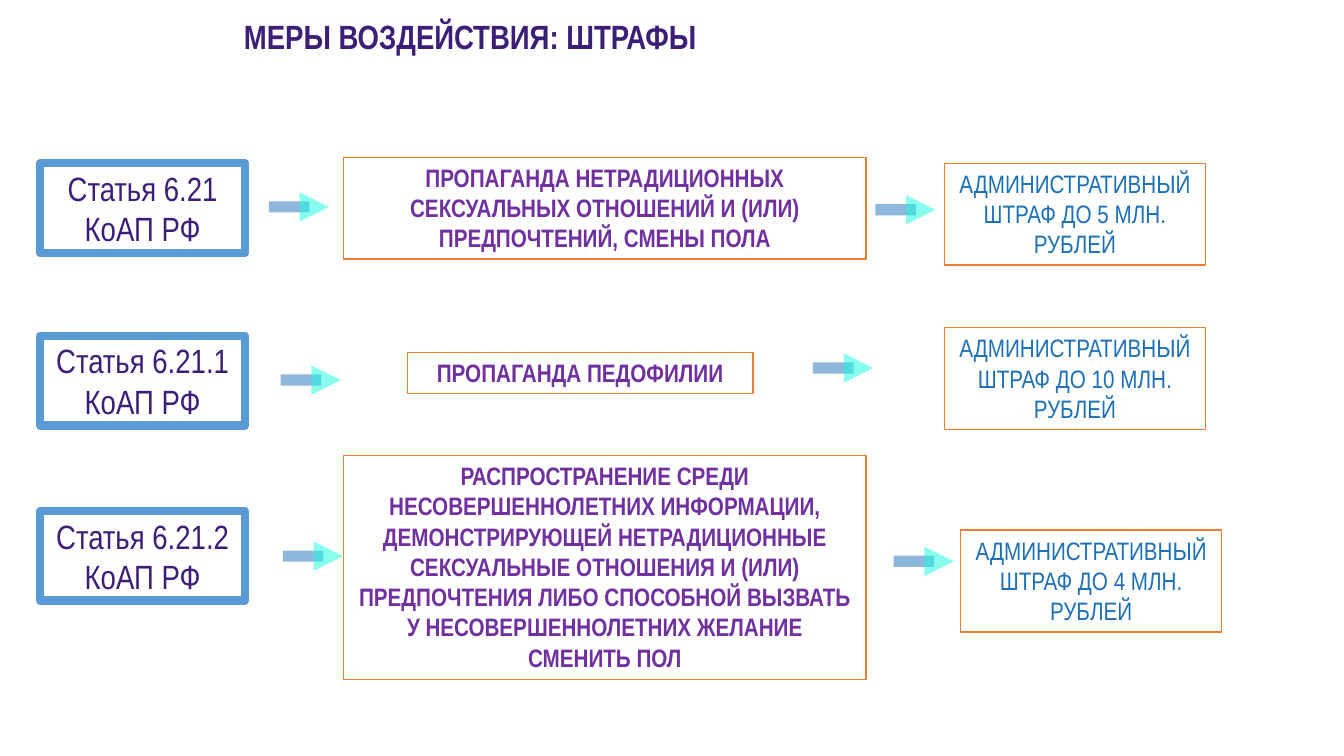
import pptx
import pptx.dml.color
import pptx.enum.shapes
import pptx.enum.text
import pptx.oxml.ns
import pptx.util
from lxml import etree

Pt = pptx.util.Pt
SHAPE = pptx.enum.shapes.MSO_SHAPE
ANCHOR = pptx.enum.text.MSO_ANCHOR
ALIGN = pptx.enum.text.PP_ALIGN
AUTO_SIZE = pptx.enum.text.MSO_AUTO_SIZE

TITLE = "МЕРЫ ВОЗДЕЙСТВИЯ: ШТРАФЫ"

# Boxes are (left, top, width, height); arrows are (left, middle).
ROWS = [
    {
        "article": "6.21", "article_top": 116.6,
        "offence": "ПРОПАГАНДА НЕТРАДИЦИОННЫХ СЕКСУАЛЬНЫХ ОТНОШЕНИЙ И (ИЛИ) "
                   "ПРЕДПОЧТЕНИЙ, СМЕНЫ ПОЛА",
        "offence_box": (245.5, 112.3, 373, 72.7),
        "limit": 5, "fine_corner": (674.6, 116.6),
        "arrows": [(192, 147.8), (625.3, 149.8)],
    },
    {
        "article": "6.21.1", "article_top": 239.8,
        "offence": "ПРОПАГАНДА ПЕДОФИЛИИ",
        "offence_box": (290.9, 252, 247, 29),
        "limit": 10, "fine_corner": (674.6, 234),
        "arrows": [(200.5, 271.5), (580.7, 262.9)],
    },
    {
        "article": "6.21.2", "article_top": 365,
        "offence": "РАСПРОСТРАНЕНИЕ СРЕДИ НЕСОВЕРШЕННОЛЕТНИХ ИНФОРМАЦИИ, "
                   "ДЕМОНСТРИРУЮЩЕЙ НЕТРАДИЦИОННЫЕ СЕКСУАЛЬНЫЕ ОТНОШЕНИЯ "
                   "И (ИЛИ) ПРЕДПОЧТЕНИЯ ЛИБО СПОСОБНОЙ ВЫЗВАТЬ У "
                   "НЕСОВЕРШЕННОЛЕТНИХ ЖЕЛАНИЕ СМЕНИТЬ ПОЛ",
        "offence_box": (245.5, 325.4, 373, 160),
        "limit": 4, "fine_corner": (686.2, 378.7),
        "arrows": [(202, 397.3), (638.3, 401)],
    },
]

THEME = {
    "font": "Arial Narrow",
    "large": 24,
    "body": 18,
    "heading": "3C1E78",
    "offence": "7030A0",
    "fine": "1D70B7",
    "paper": "FFFFFF",
    "article_line": "5B9BD5",
    "box_line": "ED7D31",
    "arrow_bar": "1D70B8",
    "arrow_head": "15FEE0",
}
ARTICLE_LEFT, ARTICLE_SIZE = 28.8, (146.2, 64.1)
FINE_SIZE = (186.5, 72.7)
BAR_SIZE, HEAD_OFFSET, HEAD_SIZE = (29, 8), 22, 21


def rgb(name):
    return pptx.dml.color.RGBColor.from_string(THEME[name])


def write(shape, text, *, size, color, bold=False, align=ALIGN.CENTER,
          anchor=ANCHOR.TOP, grow=True):
    frame = shape.text_frame
    frame.word_wrap = True
    frame.vertical_anchor = anchor
    frame.auto_size = AUTO_SIZE.SHAPE_TO_FIT_TEXT if grow else AUTO_SIZE.NONE
    paragraph = frame.paragraphs[0]
    paragraph.alignment = align
    run = paragraph.add_run()
    run.text = text
    run.font.name = THEME["font"]
    run.font.size = Pt(THEME[size])
    run.font.bold = bold
    run.font.color.rgb = rgb(color)


def add_filled(shapes, kind, box, fill):
    shape = shapes.add_shape(kind, *map(Pt, box))
    shape.shadow.inherit = False
    shape.fill.solid()
    shape.fill.fore_color.rgb = rgb(fill)
    shape.line.fill.background()
    return shape


def add_box(slide, box, text, line, line_width, **text_format):
    shape = add_filled(slide.shapes, SHAPE.RECTANGLE, box, "paper")
    shape.line.color.rgb = rgb(line)
    shape.line.width = Pt(line_width)
    write(shape, text, **text_format)


def make_half_transparent(shape):
    qn = pptx.oxml.ns.qn
    color = shape.fill.fore_color
    for element in shape.element.spPr.iter(qn("a:srgbClr")):
        if element.get("val") == str(color.rgb):
            etree.SubElement(element, qn("a:alpha"), val="50000")


def add_arrow(slide, left, middle):
    group = slide.shapes.add_group_shape()
    bar_width, bar_height = BAR_SIZE
    bar = add_filled(group.shapes, SHAPE.RECTANGLE,
                     (left, middle - bar_height / 2, bar_width, bar_height),
                     "arrow_bar")
    head = add_filled(group.shapes, SHAPE.ISOSCELES_TRIANGLE,
                      (left + HEAD_OFFSET, middle - HEAD_SIZE / 2,
                       HEAD_SIZE, HEAD_SIZE), "arrow_head")
    head.rotation = 90
    for part in (bar, head):
        make_half_transparent(part)


def add_title(slide):
    title = slide.shapes.add_textbox(Pt(174.2), Pt(11.5), Pt(553), Pt(29))
    frame = title.text_frame
    frame.margin_left = frame.margin_right = 0
    frame.margin_top = frame.margin_bottom = 0
    write(title, TITLE, size="large", color="heading", bold=True,
          align=ALIGN.LEFT)


def add_row(slide, row):
    add_box(slide, (ARTICLE_LEFT, row["article_top"], *ARTICLE_SIZE),
            f"Статья {row['article']} КоАП РФ", "article_line", 6,
            size="large", color="heading", anchor=ANCHOR.MIDDLE, grow=False)
    add_box(slide, row["offence_box"], row["offence"], "box_line", 1,
            size="body", color="offence", bold=True)
    add_box(slide, (*row["fine_corner"], *FINE_SIZE),
            f"АДМИНИСТРАТИВНЫЙ ШТРАФ ДО {row['limit']} МЛН. РУБЛЕЙ",
            "box_line", 1, size="body", color="fine")
    for left, middle in row["arrows"]:
        add_arrow(slide, left, middle)


def main():
    presentation = pptx.Presentation()
    presentation.slide_width, presentation.slide_height = Pt(960), Pt(540)
    slide = presentation.slides.add_slide(presentation.slide_layouts[6])
    add_title(slide)
    for row in ROWS:
        add_row(slide, row)
    presentation.save("out.pptx")


if __name__ == "__main__":
    main()
